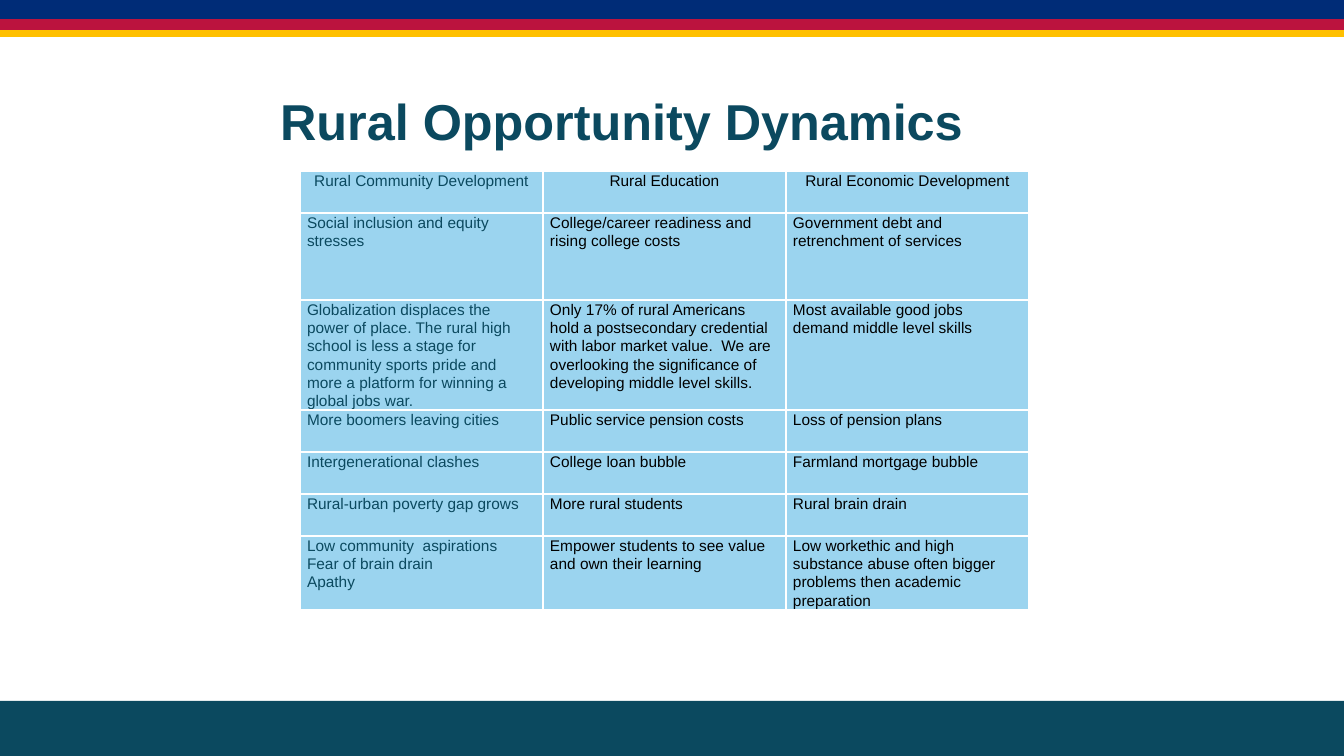
import pptx
import pptx.dml.color
import pptx.enum.shapes
import pptx.enum.text
import pptx.oxml
import pptx.oxml.ns
import pptx.util

EMU_PER_PX = 12192000 / 1344
TEAL = "0B495F"
BLACK = "000000"
WHITE = "FFFFFF"
SKY = "9BD4EF"
ALIGN = pptx.enum.text.PP_ALIGN

BANDS = [
    # left, top, width, height, fill, outlined
    (0, 701, 1344, 55, TEAL, False),
    (0, 0, 1344, 20, "002C77", True),
    (0, 20, 1344, 10, "BB133E", True),
    (-1, 31, 1345, 5, "FFC000", True),
]
COLUMN_COLORS = [TEAL, BLACK, BLACK]
COLUMN_WIDTH = 243
ROW_HEIGHTS = [42, 87, 110, 42, 42, 42, 74]
DYNAMICS = [
    ["Rural Community Development", "Rural Education", "Rural Economic Development"],
    ["Social inclusion and equity stresses",
     "College/career readiness and rising college costs",
     "Government debt and retrenchment of services"],
    ["Globalization displaces the power of place. The rural high school is less a stage "
     "for community sports pride and more a platform for winning a global jobs war.",
     "Only 17% of rural Americans hold a postsecondary credential with labor market value.  "
     "We are overlooking the significance of developing middle level skills.",
     "Most available good jobs demand middle level skills"],
    ["More boomers leaving cities", "Public service pension costs", "Loss of pension plans"],
    ["Intergenerational clashes", "College loan bubble", "Farmland mortgage bubble"],
    ["Rural-urban poverty gap grows", "More rural students", "Rural brain drain"],
    ["Low community  aspirations\nFear of brain drain\nApathy",
     "Empower students to see value and own their learning",
     "Low workethic and high substance abuse often bigger  problems then academic preparation"],
]


def px(length):
    return pptx.util.Emu(round(length * EMU_PER_PX))


def rgb(hex_color):
    return pptx.dml.color.RGBColor.from_string(hex_color)


def write(frame, text, *, size, color, bold=False, align=ALIGN.LEFT, spacing=None):
    """Fill a text frame, one paragraph per line of text."""
    frame.text = text
    for paragraph in frame.paragraphs:
        paragraph.alignment = align
        paragraph.line_spacing = spacing
        for run in paragraph.runs:
            run.font.name = "Arial"
            run.font.size = pptx.util.Pt(size)
            run.font.bold = bold
            run.font.color.rgb = rgb(color)


def add_band(slide, left, top, width, height, color, outlined):
    band = slide.shapes.add_shape(pptx.enum.shapes.MSO_SHAPE.RECTANGLE,
                                  px(left), px(top), px(width), px(height))
    band.shadow.inherit = False
    band.fill.solid()
    band.fill.fore_color.rgb = rgb(color)
    if outlined:
        band.line.color.rgb = rgb(color)
        band.line.width = pptx.util.Pt(2)
    else:
        band.line.fill.background()


def place_title(slide, text):
    title = slide.shapes.title
    title.left, title.top, title.width, title.height = px(270), px(82), px(804), px(76)
    title.text_frame.vertical_anchor = pptx.enum.text.MSO_ANCHOR.MIDDLE
    write(title.text_frame, text, size=36, color=TEAL, bold=True)


def set_borders(cell, color, points):
    properties = cell._tc.get_or_add_tcPr()
    for side in ("lnL", "lnR", "lnT", "lnB"):
        properties.append(pptx.oxml.parse_xml(
            f'<a:{side} {pptx.oxml.ns.nsdecls("a")} w="{pptx.util.Pt(points)}">'
            f'<a:solidFill><a:srgbClr val="{color}"/></a:solidFill></a:{side}>'))


def format_cell(cell, text, color, align):
    cell.margin_left = cell.margin_right = px(7)
    cell.margin_top = cell.margin_bottom = 0
    set_borders(cell, WHITE, 1)
    cell.fill.solid()
    cell.fill.fore_color.rgb = rgb(SKY)
    write(cell.text_frame, text, size=11, color=color, align=align, spacing=1.07)


def add_dynamics_table(slide):
    table = slide.shapes.add_table(
        len(DYNAMICS), len(COLUMN_COLORS), px(300), px(171),
        px(COLUMN_WIDTH * len(COLUMN_COLORS)), px(sum(ROW_HEIGHTS))).table
    table.first_row = table.horz_banding = False
    for column in table.columns:
        column.width = px(COLUMN_WIDTH)
    for r, (height, texts) in enumerate(zip(ROW_HEIGHTS, DYNAMICS)):
        table.rows[r].height = px(height)
        align = ALIGN.CENTER if r == 0 else ALIGN.LEFT
        for c, (text, color) in enumerate(zip(texts, COLUMN_COLORS)):
            format_cell(table.cell(r, c), text, color, align)


def main():
    deck = pptx.Presentation()
    deck.slide_width, deck.slide_height = px(1344), px(756)
    title_only = deck.slide_layouts[5]
    slide = deck.slides.add_slide(title_only)
    for band in BANDS:
        add_band(slide, *band)
    place_title(slide, "Rural Opportunity Dynamics")
    add_dynamics_table(slide)
    deck.save("out.pptx")


if __name__ == "__main__":
    main()
